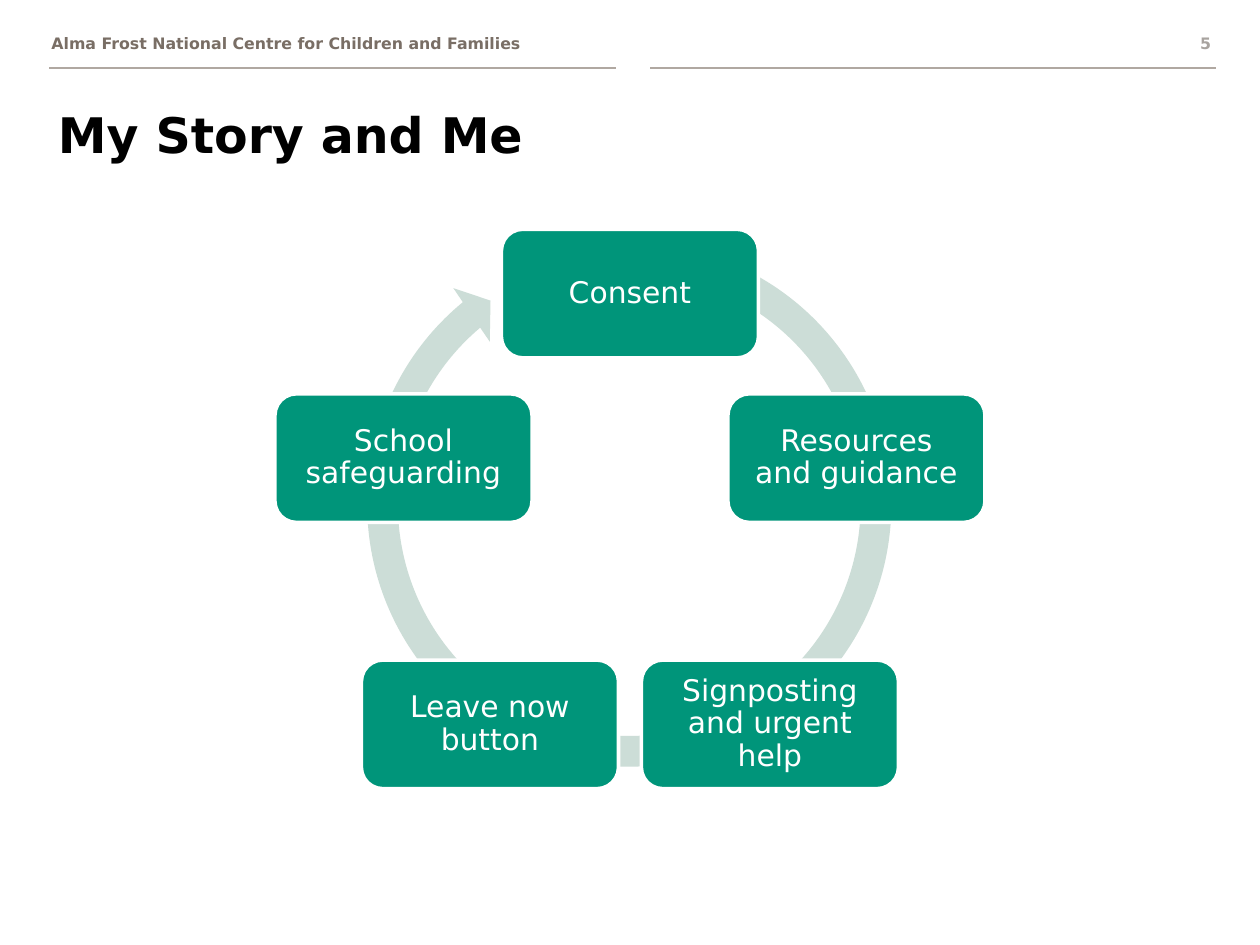
from math import cos, pi, sin

from lxml import etree
from pptx import Presentation
from pptx.dml.color import RGBColor
from pptx.enum.shapes import MSO_CONNECTOR, MSO_SHAPE
from pptx.enum.text import MSO_ANCHOR, PP_ALIGN
from pptx.oxml.ns import qn
from pptx.util import Inches, Pt

FONT = "DejaVu Sans"
COLORS = {
    "rule": "B0A8A1", "header": "796E65", "number": "A8A39F", "title": "000000",
    "ring": "CCDDD7", "node": "00957A", "white": "FFFFFF",
}
TITLE = "My Story and Me"
HEADER = "Alma Frost National Centre for Children and Families"
PAGE_NUMBER = "5"
STEPS = [
    "Consent",
    "Resources and guidance",
    "Signposting and urgent help",
    "Leave now button",
    "School safeguarding",
]

RULE_Y = 0.54
RULES = [(0.39, 4.89), (5.16, 9.65)]
CENTER_X, CENTER_Y, RADIUS = 5, 4.22, 1.89
NODE_WIDTH, NODE_HEIGHT, NODE_INSET = 2.04, 1.02, 0.12
RING_BOX = (2.78, 1.79, 4.43, 4.43)
RING_ADJUSTMENTS = (0.055, 3.307, 138.152, 173.621, 0.058)


def color(name):
    return RGBColor.from_string(COLORS[name])


def inches(*values):
    return [Inches(value) for value in values]


def write(shape, text, size, color_name, bold=False, align=PP_ALIGN.LEFT,
          anchor=MSO_ANCHOR.TOP):
    frame = shape.text_frame
    frame.text = text
    frame.word_wrap = True
    frame.vertical_anchor = anchor
    para = frame.paragraphs[0]
    para.alignment = align
    font = para.runs[0].font
    font.name, font.size, font.bold = FONT, Pt(size), bold
    font.color.rgb = color(color_name)
    return para


def add_rule(slide, left, right):
    rule = slide.shapes.add_connector(
        MSO_CONNECTOR.STRAIGHT, *inches(left, RULE_Y, right, RULE_Y))
    rule.line.color.rgb = color("rule")
    rule.line.width = Pt(1)
    etree.SubElement(rule._element.spPr, qn("a:effectLst"))


def add_filled(slide, kind, box, fill):
    shape = slide.shapes.add_shape(kind, *inches(*box))
    shape.shadow.inherit = False
    shape.fill.solid()
    shape.fill.fore_color.rgb = color(fill)
    shape.line.fill.background()
    return shape


def add_ring(slide):
    ring = add_filled(slide, MSO_SHAPE.CIRCULAR_ARROW, RING_BOX, "ring")
    for index, value in enumerate(RING_ADJUSTMENTS):
        ring.adjustments[index] = value


def add_step(slide, index, text):
    """Place a step clockwise around the circle, the first one at the top."""
    angle = 2 * pi * index / len(STEPS)
    left = CENTER_X + RADIUS * sin(angle) - NODE_WIDTH / 2
    top = CENTER_Y - RADIUS * cos(angle) - NODE_HEIGHT / 2
    node = add_filled(slide, MSO_SHAPE.ROUNDED_RECTANGLE,
                      (left, top, NODE_WIDTH, NODE_HEIGHT), "node")
    node.line.color.rgb = color("white")
    node.line.width = Pt(2)
    frame = node.text_frame
    frame.margin_left = frame.margin_right = Inches(NODE_INSET)
    frame.margin_top = frame.margin_bottom = Inches(NODE_INSET)
    para = write(node, text, 17, "white", align=PP_ALIGN.CENTER,
                 anchor=MSO_ANCHOR.MIDDLE)
    para.line_spacing = 0.9


def main():
    deck = Presentation()
    deck.slide_width, deck.slide_height = inches(10, 7.5)
    slide = deck.slides.add_slide(deck.slide_layouts[5])

    title = slide.shapes.title
    title.left, title.top, title.width, title.height = inches(0.36, 0.78, 9, 0.76)
    write(title, TITLE, 28, "title", bold=True)

    for left, right in RULES:
        add_rule(slide, left, right)
    header = slide.shapes.add_textbox(*inches(0.31, 0.22, 4.48, 0.25))
    write(header, HEADER, 9, "header", bold=True)
    number = slide.shapes.add_textbox(*inches(9.13, 0.22, 0.58, 0.25))
    write(number, PAGE_NUMBER, 9, "number", bold=True, align=PP_ALIGN.RIGHT)

    add_ring(slide)
    for index, text in enumerate(STEPS):
        add_step(slide, index, text)
    deck.save("out.pptx")


if __name__ == "__main__":
    main()
